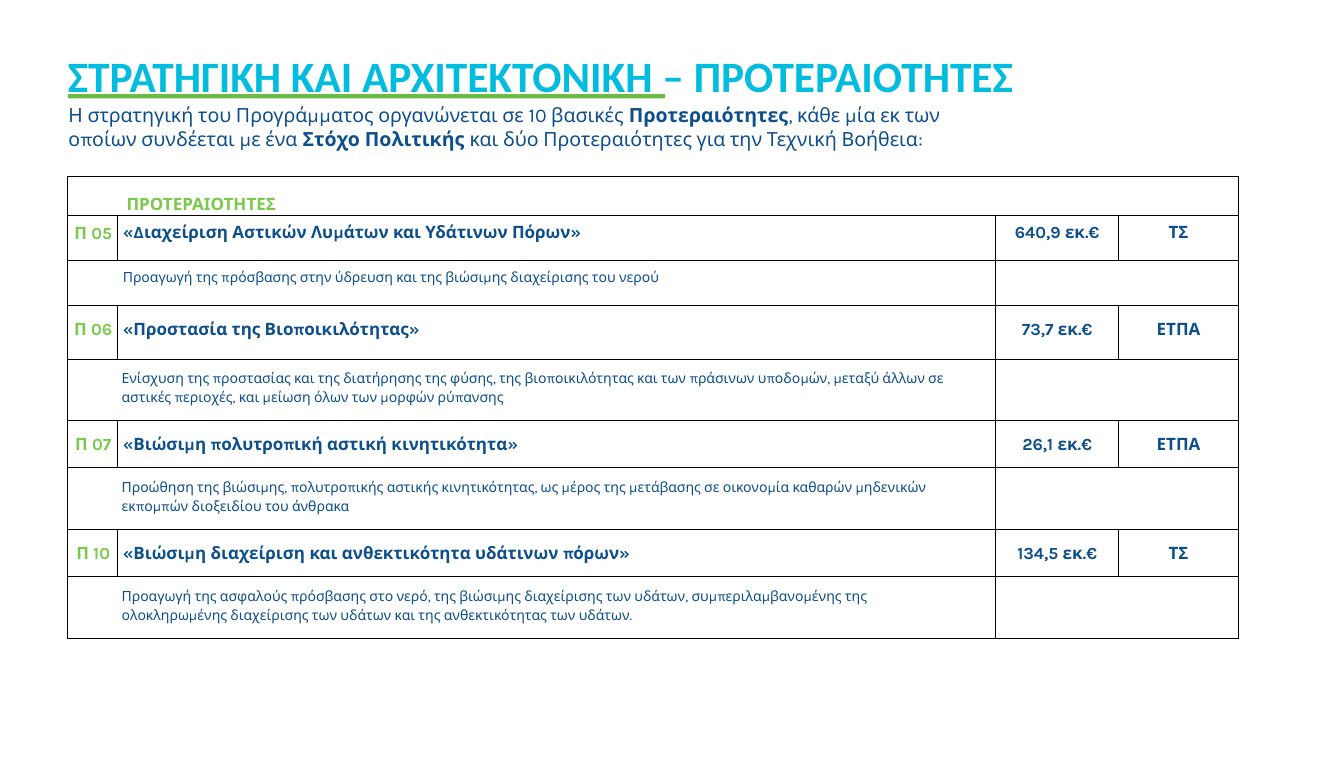
import pptx
import pptx.dml.color
import pptx.enum.shapes
import pptx.enum.text
import pptx.oxml.ns
import pptx.util
from lxml import etree
from pptx.util import Inches

CYAN, GREEN, LIME, NAVY, BLACK = "00BCDE", "6ABC45", "79C94B", "0D4F8B", "000000"
LEFT = pptx.enum.text.PP_ALIGN.LEFT
MID = pptx.enum.text.PP_ALIGN.CENTER

COLS = [0.82, 14.37, 2.01, 1.96]
HEAD = 0.63
# code, title, amount, fund, row height, top inset,
# description, its row height, left inset, line spacing
ITEMS = [
    ("Π 05", "«Διαχείριση Αστικών Λυμάτων και Υδάτινων Πόρων»", "640,9 εκ.€", "ΤΣ",
     0.74, 0.13,
     "Προαγωγή της πρόσβασης στην ύδρευση και της βιώσιμης διαχείρισης του νερού",
     0.74, 0.91, 1),
    ("Π 06", "«Προστασία της Βιοποικιλότητας»", "73,7 εκ.€", "ΕΤΠΑ", 0.87, 0.23,
     "Ενίσχυση της προστασίας και της διατήρησης της φύσης, της βιοποικιλότητας και των "
     "πράσινων υποδομών, μεταξύ άλλων σε αστικές περιοχές, και μείωση όλων των μορφών "
     "ρύπανσης", 1.01, 0.89, 1.16),
    ("Π 07", "«Βιώσιμη πολυτροπική αστική κινητικότητα»", "26,1 εκ.€", "ΕΤΠΑ", 0.77, 0.23,
     "Προώθηση της βιώσιμης, πολυτροπικής αστικής κινητικότητας, ως μέρος της μετάβασης σε "
     "οικονομία καθαρών μηδενικών εκπομπών διοξειδίου του άνθρακα", 1.01, 0.89, 1.16),
    ("Π 10", "«Βιώσιμη διαχείριση και ανθεκτικότητα υδάτινων πόρων»", "134,5 εκ.€", "ΤΣ",
     0.77, 0.23,
     "Προαγωγή της ασφαλούς πρόσβασης στο νερό, της βιώσιμης διαχείρισης των υδάτων, "
     "συμπεριλαμβανομένης της ολοκληρωμένης διαχείρισης των υδάτων και της ανθεκτικότητας "
     "των υδάτων.", 1.01, 0.89, 1.16),
]
INTRO = [
    ("Η στρατηγική του Προγράμματος οργανώνεται σε 10 βασικές ", False),
    ("Προτεραιότητες", True),
    (", κάθε μία εκ των οποίων συνδέεται με ένα ", False),
    ("Στόχο Πολιτικής ", True),
    ("και δύο Προτεραιότητες για την Τεχνική Βοήθεια:", False),
]


def color(code):
    return pptx.dml.color.RGBColor.from_string(code)


def style(font, name, size, code, bold):
    font.name, font.size, font.bold = name, pptx.util.Pt(size), bold
    font.color.rgb = color(code)


def inset(target, left, top, right=0):
    """Set the margins of a cell or text frame."""
    target.margin_left, target.margin_top = Inches(left), Inches(top)
    target.margin_right, target.margin_bottom = Inches(right), 0


def frame(slide, box, top):
    """Add an empty wrapping text box and return its text frame."""
    text = slide.shapes.add_textbox(*map(Inches, box)).text_frame
    text.word_wrap = True
    inset(text, 0.01, top)
    return text


def title(slide, box):
    left, top = box[:2]
    bar = slide.shapes.add_shape(
        pptx.enum.shapes.MSO_SHAPE.RECTANGLE,
        Inches(left + 0.01), Inches(top + 0.76), Inches(9.77), Inches(0.07))
    bar.shadow.inherit = False
    bar.fill.solid()
    bar.fill.fore_color.rgb = color(GREEN)
    bar.line.fill.background()
    text = frame(slide, box, 0.02)
    text.text = "ΣΤΡΑΤΗΓΙΚΗ ΚΑΙ ΑΡΧΙΤΕΚΤΟΝΙΚΗ – ΠΡΟΤΕΡΑΙΟΤΗΤΕΣ"
    style(text.paragraphs[0].runs[0].font, "Calibri", 51, CYAN, True)


def intro(slide, box):
    para = frame(slide, box, 0.01).paragraphs[0]
    para.line_spacing = 1.01
    for words, bold in INTRO:
        run = para.add_run()
        run.text = words
        style(run.font, "Karla", 23, NAVY, bold)


def border(cell):
    """Draw the four edges of a cell and clear its fill."""
    props = cell._tc.get_or_add_tcPr()
    for side in ("a:lnL", "a:lnR", "a:lnT", "a:lnB"):
        line = etree.SubElement(props, pptx.oxml.ns.qn(side), w="12700")
        fill = etree.SubElement(line, pptx.oxml.ns.qn("a:solidFill"))
        etree.SubElement(fill, pptx.oxml.ns.qn("a:srgbClr"), val=BLACK)
    cell.fill.background()


def write(cell, words, left, top, right=0, size=20, code=NAVY, bold=True, align=LEFT,
          lead=None):
    inset(cell, left, top, right)
    cell.text_frame.text = words
    para = cell.text_frame.paragraphs[0]
    para.alignment = align
    if lead:
        para.line_spacing = lead
    style(para.runs[0].font, "Karla", size, code, bold)


def table(slide, box):
    rows = 1 + 2 * len(ITEMS)
    grid = slide.shapes.add_table(rows, len(COLS), *map(Inches, box)).table
    grid.first_row = grid.horz_banding = False
    for col, width in zip(grid.columns, COLS):
        col.width = Inches(width)
    for cell in grid.iter_cells():
        border(cell)

    grid.rows[0].height = Inches(HEAD)
    grid.cell(0, 0).merge(grid.cell(0, 3))
    write(grid.cell(0, 0), "ΠΡΟΤΕΡΑΙΟΤΗΤΕΣ", 0.97, 0.31, code=LIME,
          lead=pptx.util.Pt(22.7))

    for i, item in enumerate(ITEMS):
        code, name, cost, fund, high, top, about, low, left, lead = item
        row = 1 + 2 * i
        grid.rows[row].height = Inches(high)
        grid.rows[row + 1].height = Inches(low)
        write(grid.cell(row, 0), code, 0.03, top + 0.01, code=LIME, align=MID)
        write(grid.cell(row, 1), name, 0.09, top)
        write(grid.cell(row, 2), cost, 0, top, align=MID)
        write(grid.cell(row, 3), fund, 0, top, align=MID)
        for col in (0, 2):
            grid.cell(row + 1, col).merge(grid.cell(row + 1, col + 1))
        write(grid.cell(row + 1, 0), about, left, 0.15, 0.6, 16.5, bold=False, lead=lead)


def main():
    deck = pptx.Presentation()
    deck.slide_width = pptx.util.Pt(1583)
    deck.slide_height = pptx.util.Pt(896)
    slide = deck.slides.add_slide(deck.slide_layouts[6])
    title(slide, (1.1, 0.78, 15.81, 0.88))
    table(slide, (1.1, 2.89, 19.16, 7.55))
    intro(slide, (1.11, 1.67, 14.32, 0.77))
    deck.save("out.pptx")


if __name__ == "__main__":
    main()
